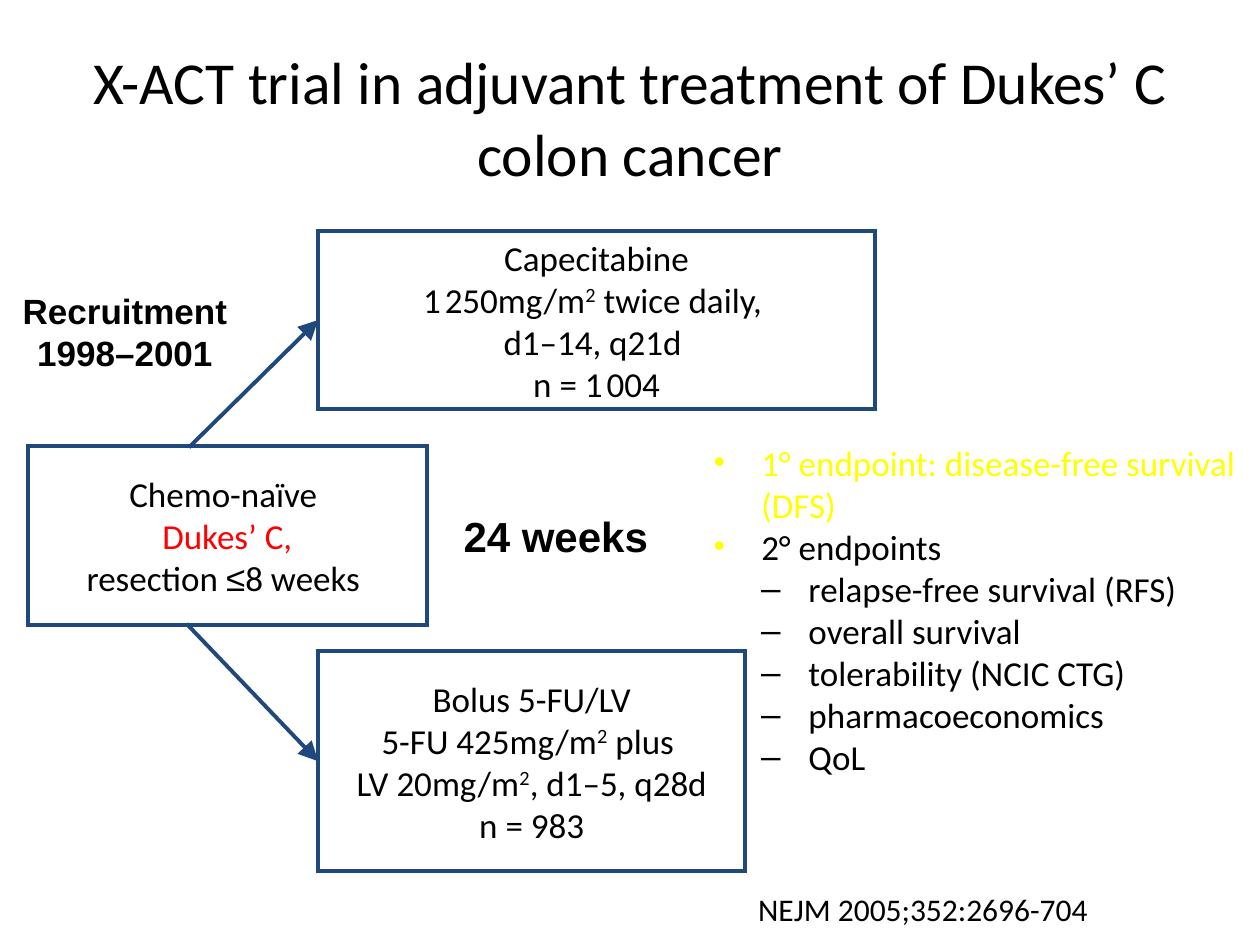
from dataclasses import dataclass

from lxml.etree import SubElement
from pptx import Presentation
from pptx.dml.color import RGBColor
from pptx.enum.shapes import MSO_CONNECTOR, MSO_SHAPE
from pptx.enum.text import MSO_ANCHOR, MSO_AUTO_SIZE, PP_ALIGN
from pptx.oxml.ns import qn
from pptx.util import Pt


@dataclass(frozen=True)
class Theme:
    black: RGBColor = RGBColor(0, 0, 0)
    red: RGBColor = RGBColor(255, 0, 0)
    yellow: RGBColor = RGBColor(255, 255, 0)
    navy: RGBColor = RGBColor(0x1F, 0x49, 0x7D)
    body_font: str = "Calibri"
    label_font: str = "Arial"
    title_size: float = 34
    label_size: float = 24
    text_size: float = 20
    source_size: float = 18
    gap_size: float = 10
    line_width: float = 2.25


THEME = Theme()


@dataclass(frozen=True)
class Area:
    left: float
    top: float
    width: float
    height: float

    def lengths(self) -> tuple:
        return Pt(self.left), Pt(self.top), Pt(self.width), Pt(self.height)


@dataclass(frozen=True)
class Piece:
    text: str
    color: RGBColor = THEME.black
    size: float = THEME.text_size
    font: str = THEME.body_font
    bold: bool = False
    superscript: bool = False


@dataclass(frozen=True)
class TreatmentBox:
    area: Area
    lines: tuple


@dataclass(frozen=True)
class Label:
    area: Area
    lines: tuple
    alignment: PP_ALIGN = PP_ALIGN.LEFT
    wrap: bool = False


@dataclass(frozen=True)
class Endpoint:
    text: str
    level: int = 0
    color: RGBColor = THEME.black


def apply_format(target, values: dict) -> None:
    for name, value in values.items():
        setattr(target, name, value)


def place(shape, area: Area) -> None:
    apply_format(shape, dict(zip(("left", "top", "width", "height"), area.lengths())))


def add_piece(paragraph, piece: Piece) -> None:
    for index, text in enumerate(piece.text.split("\n")):
        if index:
            paragraph.add_line_break()
        run = paragraph.add_run()
        run.text = text
        apply_format(run.font, {"name": piece.font, "size": Pt(piece.size), "bold": piece.bold})
        run.font.color.rgb = piece.color
        if piece.superscript:
            run.font._element.set("baseline", "30000")


def write_lines(frame, lines: tuple, alignment: PP_ALIGN) -> list:
    for index, pieces in enumerate(lines):
        paragraph = frame.add_paragraph() if index else frame.paragraphs[0]
        paragraph.alignment = alignment
        for piece in pieces:
            add_piece(paragraph, piece)
    return list(frame.paragraphs)


def write_title(shape, area: Area, text: str) -> None:
    place(shape, area)
    apply_format(shape.text_frame, {"vertical_anchor": MSO_ANCHOR.MIDDLE, "auto_size": MSO_AUTO_SIZE.NONE})
    write_lines(shape.text_frame, ((Piece(text, size=THEME.title_size),),), PP_ALIGN.CENTER)


def write_endpoints(shape, area: Area, endpoints: tuple) -> None:
    place(shape, area)
    margins = dict.fromkeys(("margin_left", "margin_top", "margin_right", "margin_bottom"), 0)
    apply_format(shape.text_frame, {"auto_size": MSO_AUTO_SIZE.NONE, **margins})
    lines = tuple((Piece(endpoint.text, endpoint.color),) for endpoint in endpoints)
    paragraphs = write_lines(shape.text_frame, lines, PP_ALIGN.LEFT)
    for paragraph, endpoint in zip(paragraphs, endpoints):
        apply_format(paragraph, {"level": endpoint.level, "space_before": Pt(0)})
        properties = paragraph._p.get_or_add_pPr()
        properties.set("marL", str(Pt(27 * (endpoint.level + 1))))
        properties.set("indent", str(Pt(-27)))
        if endpoint.level == 0:
            bullet_color = SubElement(properties, qn("a:buClr"))
            SubElement(bullet_color, qn("a:srgbClr"), val=str(THEME.yellow))
            SubElement(properties, qn("a:buSzPct"), val="90000")


def style_line(line) -> None:
    line.color.rgb = THEME.navy
    line.width = Pt(THEME.line_width)
    SubElement(line._get_or_add_ln(), qn("a:miter"), lim="800000")


def add_box(slide, box: TreatmentBox):
    shape = slide.shapes.add_shape(MSO_SHAPE.RECTANGLE, *box.area.lengths())
    shape.shadow.inherit = False
    shape.fill.background()
    style_line(shape.line)
    apply_format(shape.text_frame, {"vertical_anchor": MSO_ANCHOR.MIDDLE, "word_wrap": False})
    write_lines(shape.text_frame, box.lines, PP_ALIGN.CENTER)
    return shape


def add_label(slide, label: Label) -> None:
    shape = slide.shapes.add_textbox(*label.area.lengths())
    apply_format(shape.text_frame, {"word_wrap": label.wrap, "auto_size": MSO_AUTO_SIZE.SHAPE_TO_FIT_TEXT})
    write_lines(shape.text_frame, label.lines, label.alignment)


def add_arrow(slide, left: float, top: float, target) -> None:
    connector = slide.shapes.add_connector(
        MSO_CONNECTOR.STRAIGHT, Pt(left), Pt(top), target.left, target.top
    )
    connector.end_connect(target, 1)
    style_line(connector.line)
    SubElement(connector.line._get_or_add_ln(), qn("a:tailEnd"), type="triangle", w="lg", len="lg")
    SubElement(connector._element.spPr, qn("a:effectLst"))


SQUARED = Piece("2", superscript=True)
THIN_GAP = Piece(" ", size=THEME.gap_size)

PATIENTS = TreatmentBox(Area(15.8, 254.9, 228.2, 102.2), (
    (Piece("Chemo-naïve "),),
    (Piece("Dukes’ C,", THEME.red),),
    (Piece("resection "), Piece("≤", font=THEME.label_font), Piece("8 weeks ")),
))
CAPECITABINE = TreatmentBox(Area(181.8, 131.8, 318.2, 102.2), (
    (Piece("Capecitabine"),),
    (Piece("1"), THIN_GAP, Piece("250mg/m"), SQUARED, Piece(" twice daily, \nd1–14, q21d ")),
    (Piece("n = 1"), THIN_GAP, Piece("004")),
))
BOLUS = TreatmentBox(Area(181.8, 372, 244.1, 126), (
    (Piece("Bolus 5-FU/LV"),),
    (Piece("5-FU 425mg/m"), SQUARED, Piece(" plus \nLV 20mg/m"), SQUARED, Piece(", d1–5, q28d")),
    (Piece("n = 983"),),
))
LABELS = (
    Label(Area(1.4, 162, 140, 55.4), tuple(
        (Piece(text, font=THEME.label_font, bold=True),) for text in ("Recruitment", "1998–2001")
    ), PP_ALIGN.CENTER),
    Label(Area(257.8, 288, 124, 36), (
        (Piece("24 weeks", size=THEME.label_size, font=THEME.label_font, bold=True),),
    )),
    Label(Area(426.2, 504.9, 234.7, 28.8), (
        (Piece("NEJM 2005;352:2696-704", size=THEME.source_size),),
    ), wrap=True),
)
ENDPOINTS = (
    Endpoint("1° endpoint: disease-free survival (DFS)", color=THEME.yellow),
    Endpoint("2° endpoints"),
    Endpoint("relapse-free survival (RFS)", 1),
    Endpoint("overall survival", 1),
    Endpoint("tolerability (NCIC CTG)", 1),
    Endpoint("pharmacoeconomics", 1),
    Endpoint("QoL", 1),
)


def main() -> None:
    presentation = Presentation()
    apply_format(presentation, {"slide_width": Pt(720), "slide_height": Pt(540)})
    slide = presentation.slides.add_slide(presentation.slide_layouts[1])
    write_title(slide.shapes.title, Area(36, 21.6, 648, 90),
                "X-ACT trial in adjuvant treatment of Dukes’ C colon cancer")
    write_endpoints(slide.placeholders[1], Area(408, 252, 312, 210.2), ENDPOINTS)
    add_box(slide, PATIENTS)
    capecitabine = add_box(slide, CAPECITABINE)
    bolus = add_box(slide, BOLUS)
    add_arrow(slide, 106.6, 356.4, bolus)
    add_arrow(slide, 108, 255.6, capecitabine)
    for label in LABELS:
        add_label(slide, label)
    presentation.save("out.pptx")


if __name__ == "__main__":
    main()
